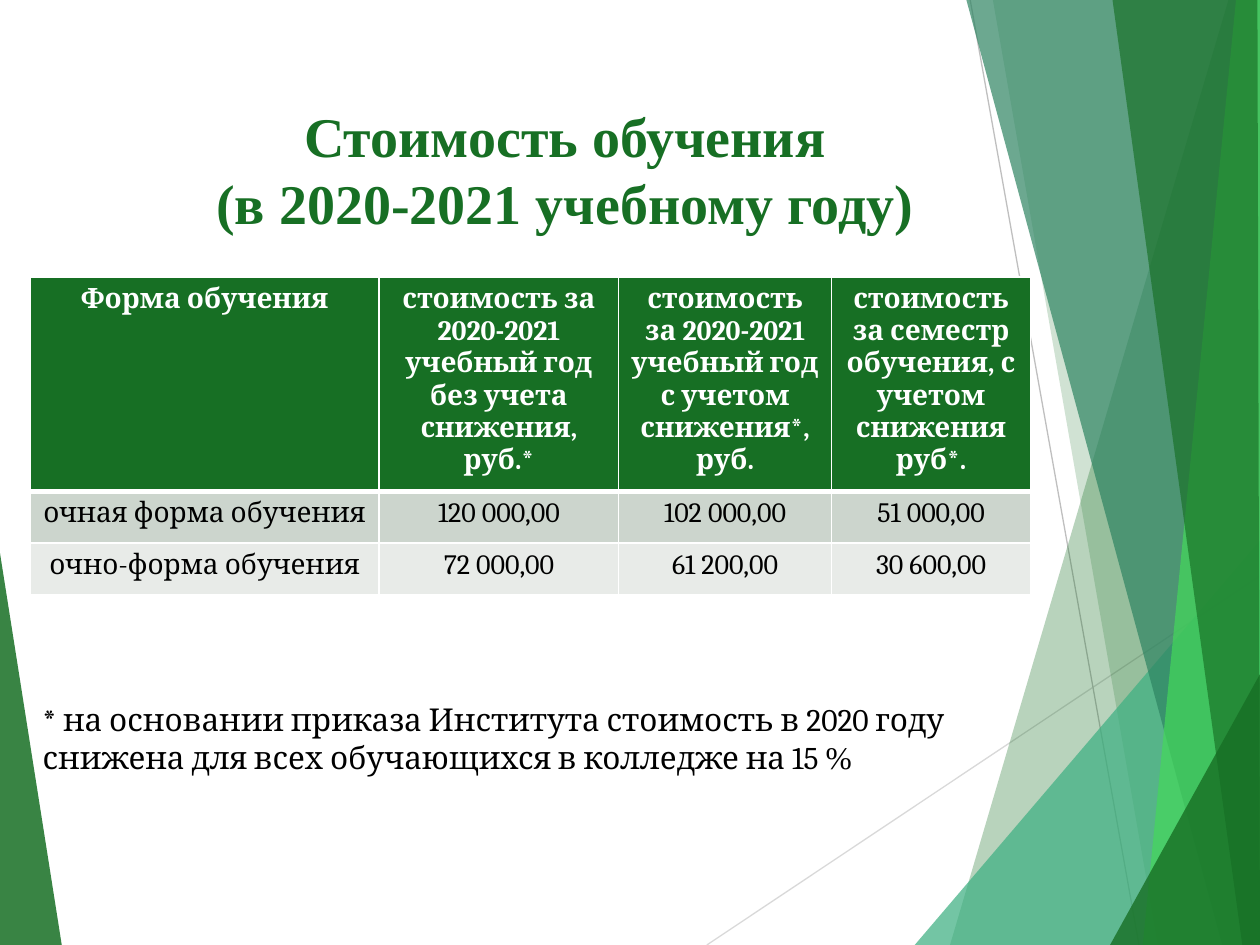
from lxml import etree
from pptx import Presentation, util as u
from pptx.dml.color import RGBColor
from pptx.enum import shapes, text
from pptx.oxml.ns import qn

COLS, ROWS = 100, 75
UNIT = u.Inches(0.1)
GREEN, WHITE, BLACK = "176F24", "FFFFFF", "000000"
SERIF, BODY = "Times New Roman", "Cambria"

LEFT_FACET = [([(0, 43.9), (4.9, 75), (0, 75)], GREEN, 85)]
RAYS = [((56.1, 75), (100, 45.7), "D9D9D9"), ((77, 0), (90.4, 75), "BFBFBF")]
RIGHT_FACETS = [
    ([(97.5, 0), (75.4, 75), (100, 75), (100, 0)], GREEN, 30),
    ([(78.8, 0), (91.9, 75), (100, 75), (100, 0)], GREEN, 20),
    ([(72.6, 75), (100, 42.9), (100, 75)], "3EB082", 72),
    ([(76.7, 0), (97, 75), (100, 75), (100, 0)], "2E8462", 70),
    ([(98.1, 0), (90.7, 75), (100, 75), (100, 0)], "44D85A", 70),
    ([(88.3, 0), (98.6, 75), (100, 75), (99.8, 0)], GREEN, 65),
    ([(88.1, 75), (100, 53.5), (100, 75)], GREEN, 80),
]

COLUMN_WIDTHS = [27.7, 19, 16.9, 15.8]
ROW_HEIGHTS = [16.2, 4.1, 4.1]
PRICES = [
    ["Форма обучения",
     "стоимость за 2020-2021 учебный год без учета снижения, руб.*",
     "стоимость за 2020-2021 учебный год с учетом снижения*, руб.",
     "стоимость за семестр обучения, с учетом снижения руб*."],
    ["очная форма обучения", "120 000,00", "102 000,00", "51 000,00"],
    ["очно-форма обучения", "72 000,00", "61 200,00", "30 600,00"],
]
ROW_FILLS = [GREEN, "CCD5CD", "E8EBE8"]


def rgb(value):
    return RGBColor.from_string(value)


def grid(*values):
    return [u.Emu(round(v * UNIT)) for v in values]


def add_run(p, words, size, font, color, bold=False):
    r = p.add_run()
    r.text = words
    r.font.size = u.Pt(size)
    r.font.name = font
    r.font.bold = bold
    r.font.color.rgb = rgb(color)


def add_text_box(s, box, anchor):
    tf = s.shapes.add_textbox(*grid(*box)).text_frame
    tf.word_wrap = True
    tf.vertical_anchor = anchor
    return tf


def draw_facets(s, box, facets):
    left, top = box[:2]
    for points, color, opacity in facets:
        corners = [grid(left + x, top + y) for x, y in points]
        outline = s.shapes.build_freeform(*corners[0])
        outline.add_line_segments(corners[1:], close=True)
        sp = outline.convert_to_shape()
        sp.shadow.inherit = False
        sp.fill.solid()
        sp.fill.fore_color.rgb = rgb(color)
        sp.line.fill.background()
        tint = sp.fill._xPr.find(qn("a:solidFill"))[0]
        etree.SubElement(tint, qn("a:alpha"), val=str(opacity * 1000))


def draw_rays(s, box, rays):
    left, top = box[:2]
    for (x1, y1), (x2, y2), color in rays:
        ray = s.shapes.add_connector(
            shapes.MSO_CONNECTOR.STRAIGHT,
            *grid(left + x1, top + y1, left + x2, top + y2))
        ray.line.width = u.Pt(0.75)
        ray.line.color.rgb = rgb(color)
        etree.SubElement(ray._element.spPr, qn("a:effectLst"))


def draw_title(s, box, lines):
    tf = add_text_box(s, box, text.MSO_ANCHOR.MIDDLE)
    p = tf.paragraphs[0]
    p.alignment = text.PP_ALIGN.CENTER
    for i, line in enumerate(lines):
        if i:
            p.add_line_break()
        add_run(p, line, 32, SERIF, GREEN, bold=True)


def set_borders(cell, widths):
    tcPr = cell._tc.get_or_add_tcPr()
    for side, width in widths.items():
        ln = etree.SubElement(tcPr, qn(f"a:ln{side}"), w=str(u.Pt(width)))
        fill = etree.SubElement(ln, qn("a:solidFill"))
        etree.SubElement(fill, qn("a:srgbClr"), val=WHITE)


def draw_prices(s, box):
    frame = s.shapes.add_table(len(PRICES), len(PRICES[0]), *grid(*box))
    table = frame.table
    for column, width in zip(table.columns, grid(*COLUMN_WIDTHS)):
        column.width = width
    for row, height in zip(table.rows, grid(*ROW_HEIGHTS)):
        row.height = height
    for i, words in enumerate(PRICES):
        header = i == 0
        for j, value in enumerate(words):
            cell = table.cell(i, j)
            set_borders(cell, {"L": 1, "R": 1, "T": 3 if i == 1 else 1,
                               "B": 3 if header else 1})
            cell.fill.solid()
            cell.fill.fore_color.rgb = rgb(ROW_FILLS[i])
            p = cell.text_frame.paragraphs[0]
            p.alignment = text.PP_ALIGN.CENTER
            add_run(p, value, 16, BODY, WHITE if header else BLACK, header)


def draw_note(s, box):
    tf = add_text_box(s, box, text.MSO_ANCHOR.TOP)
    p = tf.paragraphs[0]
    add_run(p, "* на основании приказа Института стоимость в 2020 году "
               "снижена для всех обучающихся в колледже на 15 ",
            18, BODY, BLACK)
    add_run(p, "%", 18, SERIF, BLACK)


def main():
    prs = Presentation()
    prs.slide_width, prs.slide_height = grid(COLS, ROWS)
    s = prs.slides.add_slide(prs.slide_layouts[6])
    page = (0, 0, COLS, ROWS)
    draw_facets(s, page, LEFT_FACET)
    draw_rays(s, page, RAYS)
    draw_facets(s, page, RIGHT_FACETS)
    draw_title(s, (13.6, 6.7, 62.5, 13.4),
               ["Стоимость обучения", "(в 2020-2021 учебному году)"])
    draw_prices(s, (2.4, 22, sum(COLUMN_WIDTHS), sum(ROW_HEIGHTS)))
    draw_note(s, (2.4, 55.1, 78.1, 7.1))
    prs.save("out.pptx")


if __name__ == "__main__":
    main()
